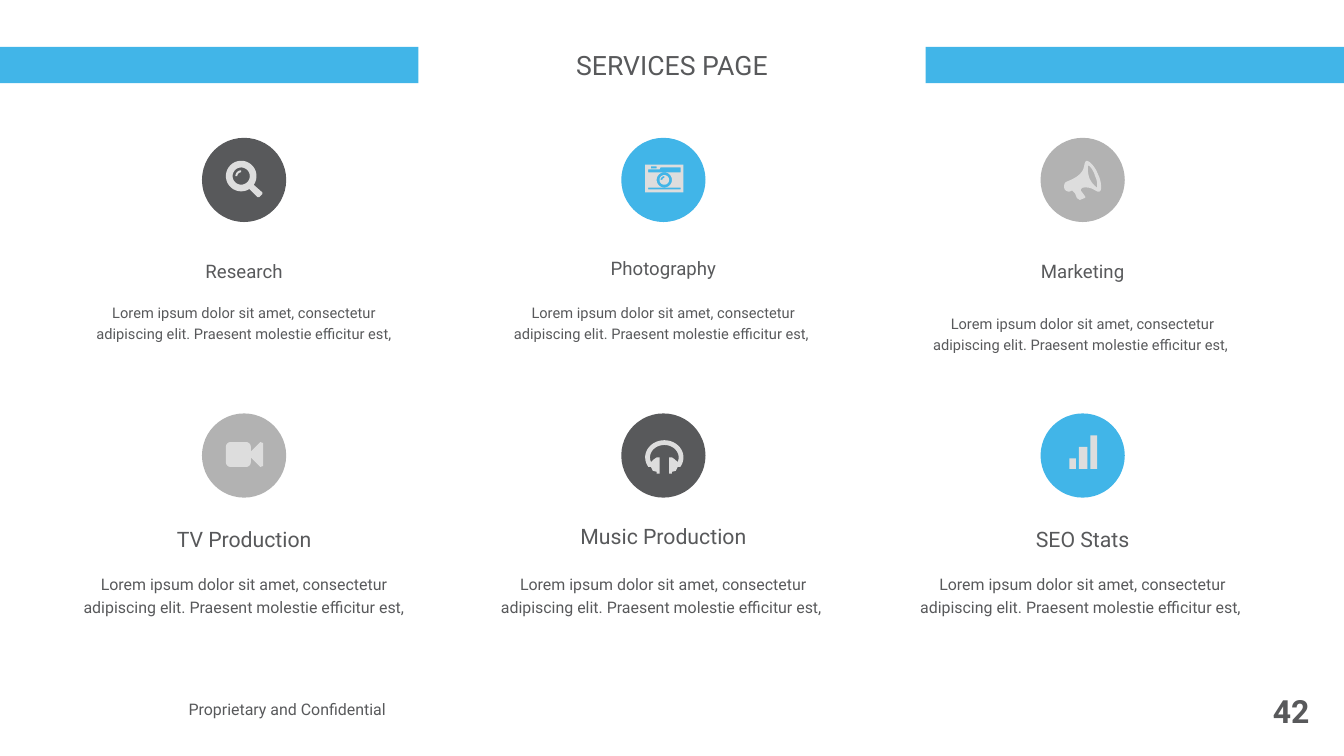
import math
from dataclasses import dataclass

import pptx
import pptx.dml.color
import pptx.enum.shapes
import pptx.enum.text
import pptx.util

Inches = pptx.util.Inches
SHAPE = pptx.enum.shapes.MSO_SHAPE
ALIGN = pptx.enum.text.PP_ALIGN
ANCHOR = pptx.enum.text.MSO_ANCHOR


@dataclass(frozen=True)
class Theme:
    font: str = "Roboto"
    dark: str = "58595B"
    blue: str = "41B5E8"
    grey: str = "B2B2B2"
    icon: str = "DDDDDD"
    white: str = "FFFFFF"
    title: int = 20
    page: int = 24
    footer: int = 12
    headings: tuple = (14, 16)  # upper row, lower row
    bodies: tuple = (11, 12)


# Outline helpers: each returns a list of (x, y) points in inches
def arc(cx, cy, r, start, end, ry=None, steps=32):
    angles = [math.radians(start + (end - start) * i / steps) for i in range(steps + 1)]
    return [(cx + r * math.cos(a), cy + (ry or r) * math.sin(a)) for a in angles]


def box(left, top, right, bottom):
    return [(left, top), (right, top), (right, bottom), (left, bottom)]


def bezier(*pts, steps=10):
    """Sample a chain of cubic curves: a start, then three points per curve."""
    out = [pts[0]]
    for k in range(0, len(pts) - 1, 3):
        for i in range(1, steps + 1):
            t = i / steps
            weights = ((1 - t) ** 3, 3 * t * (1 - t) ** 2, 3 * t * t * (1 - t), t ** 3)
            out.append(tuple(sum(w * p[axis] for w, p in zip(weights, pts[k:k + 4]))
                             for axis in (0, 1)))
    return out


def glint(cx, cy, outer, inner):
    return arc(cx, cy, outer, 180, 270) + arc(cx, cy, inner, 270, 180)


# Icons: contours measured from the centre of the disc
MAGNIFIER = [
    arc(-.03, -.04, .16, 58, 395) + [(.19, .13), (.19, .15), (.16, .18), (.14, .18)],
    arc(-.03, -.04, .09, 0, 360),
    glint(-.03, -.04, .06, .04),
]
CAMERA = [
    box(-.19, -.16, .21, .13),
    [(.18, -.13), (-.03, -.13), (-.04, -.11), (-.16, -.11), (-.16, -.08), (.18, -.08)],
    box(-.16, .08, .18, .1),
    box(-.13, -.14, -.07, -.12),
    arc(.01, 0, .08, 0, 360),
    arc(.01, 0, .05, 0, 360),
    glint(.01, 0, .04, .02),
]
MEGAPHONE = [
    bezier((.16, -.06), (.13, -.14), (.07, -.2), (.04, -.2),
           (-.01, -.17), (.07, -.07), (-.17, .02),
           (-.19, .03), (-.2, .06), (-.19, .09),
           (-.19, .11), (-.15, .13), (-.13, .12))
    + [(-.11, .11), (-.08, .14), (-.06, .19), (-.03, .21), (.02, .19), (.03, .18), (.01, .15)]
    + bezier((-.02, .11), (-.02, .1), (-.01, .08), (.01, .08),
             (.12, .07), (.14, .14), (.18, .12),
             (.2, .11), (.2, .02), (.16, -.06)),
    bezier((.15, .08), (.15, .08), (.1, .05), (.07, -.02),
           (.05, -.08), (.05, -.15), (.06, -.15),
           (.07, -.15), (.11, -.11), (.13, -.04),
           (.16, .02), (.15, .07), (.15, .08)),
]
VIDEO = [
    arc(-.14, -.09, .05, 180, 270) + arc(.02, -.09, .05, 270, 360)
    + [(.07, -.04), (.17, -.14), (.2, -.13), (.2, .11), (.17, .12), (.07, .02)]
    + arc(.02, .07, .05, 0, 90) + arc(-.14, .07, .05, 90, 180),
]
EARCUP = [(.15, .12), (.13, .16), (.09, .17), (.09, .19), (.06, .19),
          (.06, .02), (.09, .02), (.12, .04), (.15, .07)]
HEADPHONES = [
    arc(.01, .02, .2, 147, 393, ry=.18) + EARCUP
    + arc(.01, .02, .15, 380, 160, ry=.13) + [(.02 - x, y) for x, y in reversed(EARCUP)],
]
BARS = [box(-.14, .03, -.07, .14), box(-.04, -.09, .05, .14), box(.08, -.21, .15, .14)]


class Deck:
    def __init__(self, theme, width, height):
        self.theme = theme
        self.prs = pptx.Presentation()
        self.prs.slide_width, self.prs.slide_height = Inches(width), Inches(height)
        self.s = self.prs.slides.add_slide(self.prs.slide_layouts[5])

    def paint(self, sp, color):
        sp.fill.solid()
        sp.fill.fore_color.rgb = pptx.dml.color.RGBColor.from_string(color)
        sp.line.fill.background()

    def shape(self, kind, left, top, width, height, color):
        sp = self.s.shapes.add_shape(kind, *map(Inches, (left, top, width, height)))
        sp.shadow.inherit = False
        self.paint(sp, color)
        return sp

    def set_text(self, sp, text, size, align, anchor, inset=None, spacing=None, bold=False):
        tf = sp.text_frame
        tf.word_wrap = True
        tf.auto_size = pptx.enum.text.MSO_AUTO_SIZE.NONE
        tf.vertical_anchor = anchor
        if inset is not None:
            tf.margin_left = tf.margin_right = tf.margin_top = tf.margin_bottom = Inches(inset)
        p = tf.paragraphs[0]
        p.alignment = align
        if spacing:
            p.line_spacing = spacing
        r = p.add_run()
        r.text = text
        r.font.name, r.font.size, r.font.bold = self.theme.font, pptx.util.Pt(size), bold
        r.font.color.rgb = pptx.dml.color.RGBColor.from_string(self.theme.dark)

    def text(self, left, top, width, height, text, size,
             align=ALIGN.CENTER, anchor=ANCHOR.TOP, **style):
        sp = self.s.shapes.add_textbox(*map(Inches, (left, top, width, height)))
        self.set_text(sp, text, size, align, anchor, **style)

    def title(self, left, top, width, height, text, behind):
        sp = self.s.shapes.title
        sp.left, sp.top, sp.width, sp.height = map(Inches, (left, top, width, height))
        self.paint(sp, self.theme.white)
        self.set_text(sp, text, self.theme.title, ALIGN.CENTER, ANCHOR.MIDDLE, inset=.1)
        behind.element.addnext(sp.element)

    def icon(self, cx, cy, contours, disc_color, diameter=.88):
        self.shape(SHAPE.OVAL, cx - diameter / 2, cy - diameter / 2, diameter, diameter, disc_color)
        placed = [[(Inches(cx + x), Inches(cy + y)) for x, y in c] for c in contours]
        pen = self.s.shapes.build_freeform(*placed[0][0])
        for i, points in enumerate(placed):
            if i:
                pen.move_to(*points[0])
            pen.add_line_segments(points[1:], close=True)
        sp = pen.convert_to_shape()
        sp.shadow.inherit = False
        self.paint(sp, self.theme.icon)


def main():
    t = Theme()
    deck = Deck(t, 14.04, 7.9)

    # Banner and title
    banner = deck.shape(SHAPE.RECTANGLE, 0, .49, 14.04, .38, t.blue)
    deck.title(4.37, .41, 5.3, .54, "SERVICES PAGE", behind=banner)

    # Footer
    deck.text(1.93, 7.09, 3.49, .65, "Proprietary and Confidential", t.footer,
              ALIGN.LEFT, ANCHOR.MIDDLE, inset=.04)
    deck.text(13.08, 7.22, .6, .41, "42", t.page, ALIGN.RIGHT, ANCHOR.MIDDLE, inset=0, bold=True)

    # Services: name, icon, disc colour, heading top, body top
    lorem = "Lorem ipsum dolor sit amet, consectetur adipiscing elit. Praesent molestie efficitur est,"
    services = [
        ("Research", MAGNIFIER, t.dark, 2.67, 3.09),
        ("Photography", CAMERA, t.blue, 2.64, 3.09),
        ("Marketing", MEGAPHONE, t.grey, 2.67, 3.2),
        ("TV Production", VIDEO, t.grey, 5.45, 5.92),
        ("Music Production", HEADPHONES, t.dark, 5.42, 5.92),
        ("SEO Stats", BARS, t.blue, 5.45, 5.92),
    ]
    for i, (name, contours, color, heading_top, body_top) in enumerate(services):
        row, col = divmod(i, 3)
        left = .74 + 4.38 * col
        body = lorem + " " if col else lorem
        deck.text(left, heading_top, 3.62, .35, name, t.headings[row])
        deck.text(left, body_top, 3.62, 1.51, body, t.bodies[row], spacing=1.2)
        deck.icon(left + 1.81, 1.88 + 2.88 * row, contours, color)

    deck.prs.save("out.pptx")


if __name__ == "__main__":
    main()
